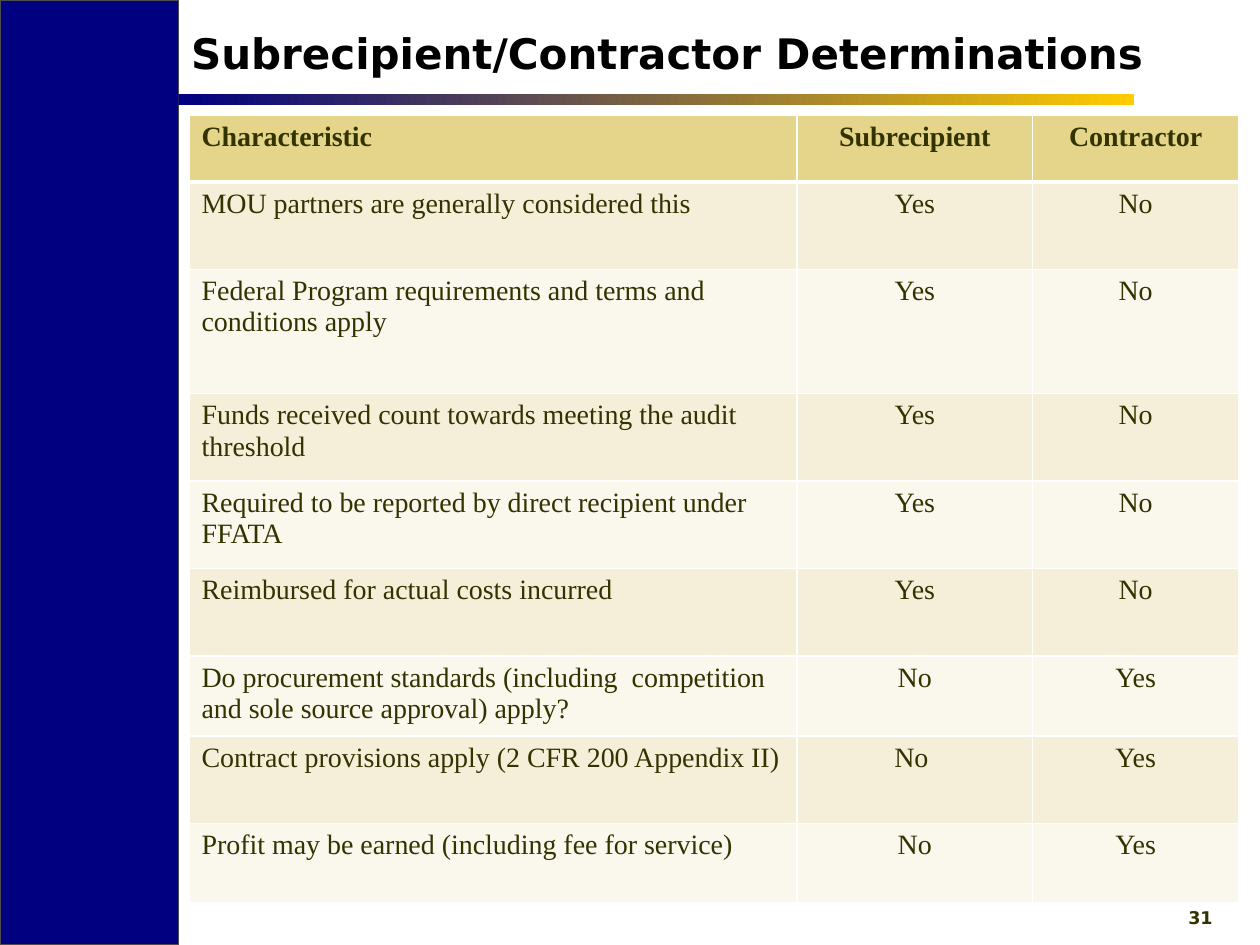
"""Build the subrecipient and contractor comparison slide."""
from lxml import etree
from pptx import Presentation
from pptx.dml.color import RGBColor
from pptx.enum import shapes, text
from pptx.oxml import ns
from pptx.util import Pt

SERIF, SANS = "Times New Roman", "DejaVu Sans"
NAVY, GOLD, OLIVE, WHITE = "000080", "FFCC00", "333300", "FFFFFF"
HEADER_FILL, BAND_FILLS = "E5D58A", ("F5EFDA", "FAF7ED")

TITLE = "Subrecipient/Contractor Determinations"
PAGE_NUMBER = "31"
HEADER = ("Characteristic", "Subrecipient", "Contractor")
ROWS = [
    ("MOU partners are generally considered this", "Yes", "No"),
    ("Federal Program requirements and terms and conditions apply", "Yes", "No"),
    ("Funds received count towards meeting the audit threshold", "Yes", "No"),
    ("Required to be reported by direct recipient under FFATA", "Yes", "No"),
    ("Reimbursed for actual costs incurred", "Yes", "No"),
    ("Do procurement standards (including  competition and sole source approval) apply?", "No", "Yes"),
    ("Contract provisions apply (2 CFR 200 Appendix II)", "No ", "Yes"),
    ("Profit may be earned (including fee for service)", "No", "Yes"),
]
COLUMN_WIDTHS = (347.5, 134.5, 118)
ROW_HEIGHTS = (38, 50, 71, 50, 50, 50, 45.5, 50, 45.5)


def color(value):
    return RGBColor.from_string(value)


def write(frame, words, size, font, ink, bold=True, align=text.PP_ALIGN.LEFT):
    paragraph = frame.paragraphs[0]
    paragraph.alignment = align
    run = paragraph.add_run()
    run.text = words
    run.font.size, run.font.name, run.font.bold = Pt(size), font, bold
    run.font.color.rgb = color(ink)


def add_bar(slide, box):
    shape = slide.shapes.add_shape(shapes.MSO_SHAPE.RECTANGLE, *map(Pt, box))
    shape.shadow.inherit = False
    return shape


def add_borders(cell, bottom):
    properties = cell._tc.get_or_add_tcPr()
    sides = (("lnL", 1), ("lnR", 1), ("lnT", 1), ("lnB", bottom))
    for position, (side, width) in enumerate(sides):
        line = etree.Element(ns.qn(f"a:{side}"), w=str(Pt(width)))
        fill = etree.SubElement(line, ns.qn("a:solidFill"))
        etree.SubElement(fill, ns.qn("a:srgbClr"), val=WHITE)
        properties.insert(position, line)


def add_table(slide):
    rows = [HEADER, *ROWS]
    table = slide.shapes.add_table(
        len(rows), len(HEADER), Pt(108), Pt(66), Pt(sum(COLUMN_WIDTHS)), Pt(sum(ROW_HEIGHTS))
    ).table
    for column, width in zip(table.columns, COLUMN_WIDTHS):
        column.width = Pt(width)
    for row, height in zip(table.rows, ROW_HEIGHTS):
        row.height = Pt(height)
    for r, values in enumerate(rows):
        for c, words in enumerate(values):
            cell = table.cell(r, c)
            cell.fill.solid()
            cell.fill.fore_color.rgb = color(BAND_FILLS[(r - 1) % 2] if r else HEADER_FILL)
            align = text.PP_ALIGN.CENTER if c else text.PP_ALIGN.LEFT
            write(cell.text_frame, words, 16, SERIF, OLIVE, r == 0, align)
            add_borders(cell, 1 if r else 3)


def main():
    presentation = Presentation()
    presentation.slide_width, presentation.slide_height = Pt(720), Pt(540)
    slide = presentation.slides.add_slide(presentation.slide_layouts[5])

    sidebar = add_bar(slide, (0, 0, 102, 540))
    sidebar.fill.solid()
    sidebar.fill.fore_color.rgb = color(NAVY)
    sidebar.line.color.rgb = color("4D4D4D")
    sidebar.line.width = Pt(1)

    rule = add_bar(slide, (102, 54, 546, 6))
    rule.fill.gradient()
    rule.fill.gradient_angle = 0
    for stop, value in zip(rule.fill.gradient_stops, (NAVY, GOLD)):
        stop.color.rgb = color(value)
    rule.line.fill.background()

    number_frame = slide.shapes.add_textbox(*map(Pt, (672, 515, 36, 19))).text_frame
    number_frame.word_wrap = True
    write(number_frame, PAGE_NUMBER, 10, SANS, OLIVE)

    add_table(slide)

    title = slide.shapes.title
    title.left, title.top, title.width, title.height = map(Pt, (102, 12, 612, 45))
    title_frame = title.text_frame
    title_frame.auto_size = text.MSO_AUTO_SIZE.NONE
    title_frame.vertical_anchor = text.MSO_ANCHOR.TOP
    title_frame.margin_top = Pt(3.6)
    write(title_frame, TITLE, 24, SANS, "000000")

    presentation.save("out.pptx")


if __name__ == "__main__":
    main()
